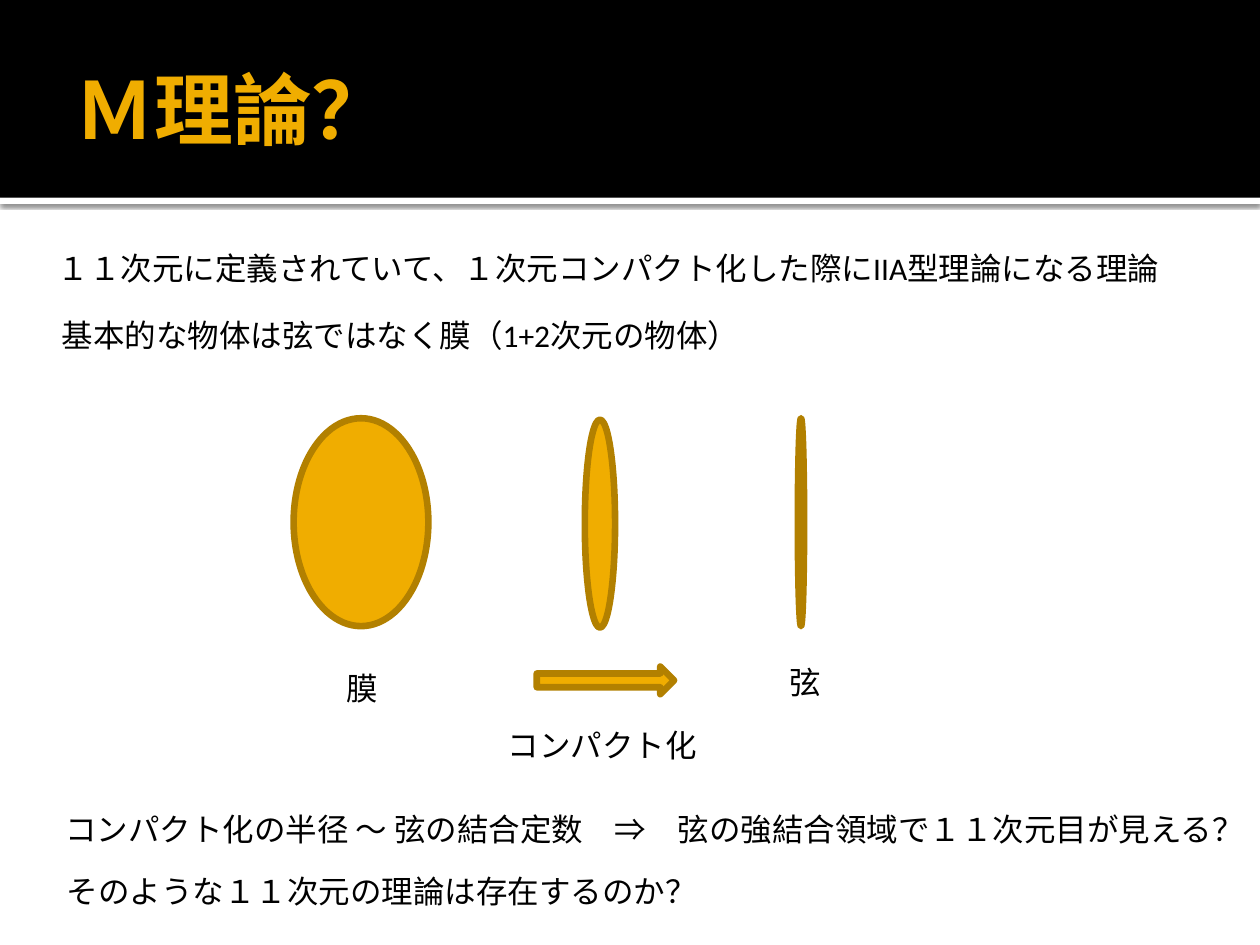
from lxml import etree
from pptx import Presentation
from pptx.dml.color import RGBColor
from pptx.enum.shapes import MSO_SHAPE as Shape
from pptx.enum.text import MSO_ANCHOR as Anchor, MSO_AUTO_SIZE as AutoSize, PP_ALIGN as Align
from pptx.oxml import parse_xml
from pptx.util import Pt

BLACK = RGBColor(0x00, 0x00, 0x00)
WHITE = RGBColor(0xFF, 0xFF, 0xFF)
GOLD = RGBColor(0xF0, 0xAD, 0x00)
DARK_GOLD = RGBColor(0xB2, 0x80, 0x00)
FONT = "Calibri"
DRAWING_NS = "http://schemas.openxmlformats.org/drawingml/2006/main"


def add_filled(kind, left, top, width, height, fill, line=None):
    shape = page.shapes.add_shape(kind, Pt(left), Pt(top), Pt(width), Pt(height))
    shape.shadow.inherit = False
    shape.fill.solid()
    shape.fill.fore_color.rgb = fill
    if line is None:
        shape.line.fill.background()
    else:
        shape.line.color.rgb = line
        shape.line.width = Pt(3.78)
    return shape


def add_run(para, text, size, color, bold=False):
    span = para.add_run()
    span.text = text
    span.font.name = FONT
    span.font.size = Pt(size)
    span.font.bold = bold
    span.font.color.rgb = color


deck = Presentation()
deck.slide_width, deck.slide_height = Pt(720), Pt(540)
page = deck.slides.add_slide(deck.slide_layouts[5])

# Header band with a shadowed white rule beneath it
rule = add_filled(Shape.RECTANGLE, 0, 113, 720, 3.6, WHITE)
effects = rule._element.spPr.find(f"{{{DRAWING_NS}}}effectLst")
effects.append(parse_xml(
    f'<a:outerShdw xmlns:a="{DRAWING_NS}" blurRad="{Pt(2.5)}" dist="{Pt(0.8)}" '
    'dir="5400000" algn="t" rotWithShape="0">'
    '<a:srgbClr val="000000"><a:alpha val="60000"/></a:srgbClr></a:outerShdw>'))
add_filled(Shape.RECTANGLE, 0, 0, 720, 113, BLACK)

# Title, brought in front of the band
title = page.shapes.title
page.shapes._spTree.append(title._element)
title.left, title.top, title.width, title.height = Pt(36), Pt(12.2), Pt(648), Pt(98.6)
frame = title.text_frame
frame.auto_size = AutoSize.NONE
frame.word_wrap = True
frame.vertical_anchor = Anchor.MIDDLE
frame.margin_left = Pt(7.2)
frame.margin_right = frame.margin_top = frame.margin_bottom = Pt(3.6)
frame.paragraphs[0].alignment = Align.LEFT
add_run(frame.paragraphs[0], "Ｍ理論？", 45, GOLD, bold=True)

# Membrane shrinking to a string, and the arrow of compactification
for left, top, width in [(167.8, 239, 77), (334.2, 239.8, 17.3), (455.9, 239, 3.6)]:
    add_filled(Shape.OVAL, left, top, width, 118.8, GOLD, DARK_GOLD)
add_filled(Shape.RIGHT_ARROW, 306.7, 380.9, 78.5, 15.8, GOLD, DARK_GOLD)

# Statements and captions: text, left, top, width, wrap
texts = [
    ("１１次元に定義されていて、１次元コンパクト化した際にIIA型理論になる理論", 25.9, 139, 653, False),
    ("基本的な物体は弦ではなく膜（1+2次元の物体）", 28.1, 177.1, 404.6, True),
    ("膜", 190.8, 378.7, 32.4, False),
    ("弦", 444.2, 375.1, 32.4, False),
    ("コンパクト化", 283, 411.1, 123.8, False),
    ("そのような１１次元の理論は存在するのか？", 31, 494.6, 378, False),
    ("コンパクト化の半径 ～ 弦の結合定数　⇒　弦の強結合領域で１１次元目が見える？", 30.2, 459.4, 694, False),
]
for text, left, top, width, wrap in texts:
    box = page.shapes.add_textbox(Pt(left), Pt(top), Pt(width), Pt(28.8))
    box.text_frame.word_wrap = wrap
    box.text_frame.auto_size = AutoSize.SHAPE_TO_FIT_TEXT
    add_run(box.text_frame.paragraphs[0], text, 18, BLACK)

deck.save("out.pptx")
